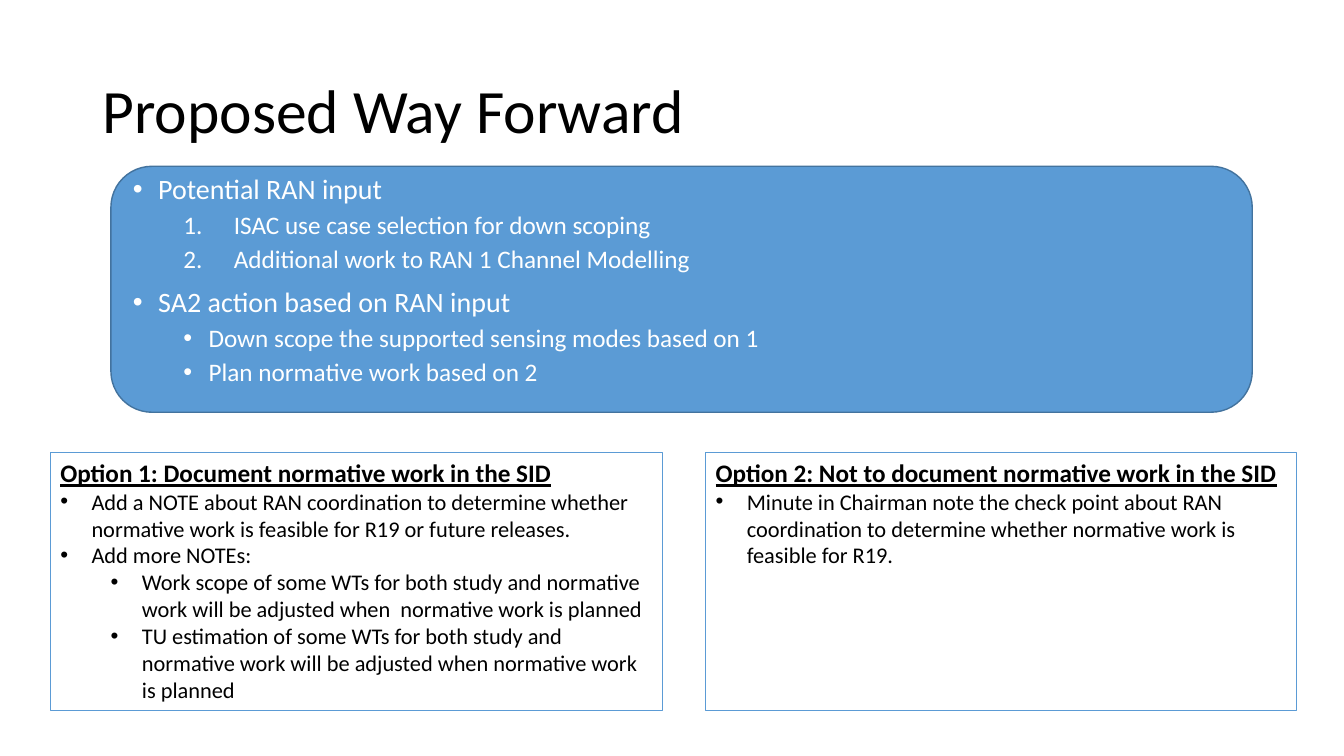
import pptx
import pptx.dml.color
import pptx.enum.shapes
import pptx.enum.text
import pptx.oxml.ns
import pptx.util
from lxml import etree

Inches = pptx.util.Inches
Pt = pptx.util.Pt
Kind = pptx.enum.shapes.MSO_SHAPE
Anchor = pptx.enum.text.MSO_ANCHOR
Align = pptx.enum.text.PP_ALIGN

FONT = "Calibri"
BLUE, EDGE, WHITE, BLACK = "5B9BD5", "43739E", "FFFFFF", "000000"


def color(code):
    return pptx.dml.color.RGBColor.from_string(code)


def mark(para, left, hang, number=False):
    """Give a paragraph a bullet or a number with a hanging indent."""
    props = para._p.get_or_add_pPr()
    props.set("marL", str(Inches(left)))
    props.set("indent", str(-Inches(hang)))
    font = etree.SubElement(props, pptx.oxml.ns.qn("a:buFont"))
    if number:
        font.set("typeface", "+mj-lt")
        auto = etree.SubElement(props, pptx.oxml.ns.qn("a:buAutoNum"))
        auto.set("type", "arabicPeriod")
    else:
        font.set("typeface", "Arial")
        char = etree.SubElement(props, pptx.oxml.ns.qn("a:buChar"))
        char.set("char", "•")


def write(frame, text, size=16, ink=BLACK, bold=False, line=False,
          level=0, left=0, hang=0, number=False, space=0, lead=1.0):
    """Add one paragraph, using the empty first one when there is one."""
    first = not frame.text
    para = frame.paragraphs[0] if first else frame.add_paragraph()
    para.level = level
    para.alignment = Align.LEFT
    para.line_spacing = lead
    para.space_before = Pt(0 if first else space)
    if hang:
        mark(para, left, hang, number)
    run = para.add_run()
    run.text = text
    run.font.name = FONT
    run.font.size = Pt(size)
    run.font.bold = bold
    run.font.underline = line
    run.font.color.rgb = color(ink)


def panel(slide, kind, box, fill, edge, width):
    shape = slide.shapes.add_shape(kind, *map(Inches, box))
    shape.shadow.inherit = False
    if fill:
        shape.fill.solid()
        shape.fill.fore_color.rgb = color(fill)
    else:
        shape.fill.background()
    shape.line.color.rgb = color(edge)
    shape.line.width = Pt(width)
    return shape


def label(slide, box, anchor=Anchor.TOP):
    frame = slide.shapes.add_textbox(*map(Inches, box)).text_frame
    frame.word_wrap = True
    frame.vertical_anchor = anchor
    return frame


def title(slide, box, text):
    write(label(slide, box, Anchor.MIDDLE), text, size=44, lead=0.9)


def inputs(slide, box, groups):
    """Draw the blue panel with its heads and their sub-items."""
    left, top, width, height = box
    panel(slide, Kind.ROUNDED_RECTANGLE, box, BLUE, EDGE, 1)
    frame = label(slide, (left + 0.12, top + 0.04, width - 0.77, height + 0.11))
    for head, number, items in groups:
        write(frame, head, size=20, ink=WHITE, left=0.25, hang=0.25,
              space=10, lead=0.9)
        hang = 0.5 if number else 0.25
        for item in items:
            write(frame, item, size=18, ink=WHITE, level=1, left=0.5 + hang,
                  hang=hang, number=number, space=5, lead=0.9)


def option(slide, box, head, items):
    frame = panel(slide, Kind.RECTANGLE, box, None, BLUE, 0.75).text_frame
    frame.word_wrap = True
    frame.vertical_anchor = Anchor.TOP
    write(frame, head, size=18, bold=True, line=True)
    for level, item in items:
        write(frame, item, level=level, left=0.31 + 0.5 * level, hang=0.31)


def main():
    deck = pptx.Presentation()
    deck.slide_width, deck.slide_height = Inches(13.33), Inches(7.5)
    slide = deck.slides.add_slide(deck.slide_layouts[6])

    title(slide, (0.92, 0.4, 11.5, 1.45), "Proposed Way Forward")
    inputs(slide, (1.1, 1.65, 11.32, 2.44), [
        ("Potential RAN input", True, [
            "ISAC use case selection for down scoping",
            "Additional work to RAN 1 Channel Modelling"]),
        ("SA2 action based on RAN input", False, [
            "Down scope the supported sensing modes based on 1",
            "Plan normative work based on 2"]),
    ])

    top, height = 4.49, 2.56
    option(slide, (0.5, top, 6.07, height),
           "Option 1: Document normative work in the SID", [
        (0, "Add a NOTE about RAN coordination to determine whether "
            "normative work is feasible for R19 or future releases."),
        (0, "Add more NOTEs:"),
        (1, "Work scope of some WTs for both study and normative work "
            "will be adjusted when  normative work is planned"),
        (1, "TU estimation of some WTs for both study and normative work "
            "will be adjusted when normative work is planned"),
    ])
    option(slide, (7, top, 5.86, height),
           "Option 2: Not to document normative work in the SID", [
        (0, "Minute in Chairman note the check point about RAN coordination "
            "to determine whether normative work is feasible for R19."),
    ])
    deck.save("out.pptx")


if __name__ == "__main__":
    main()
